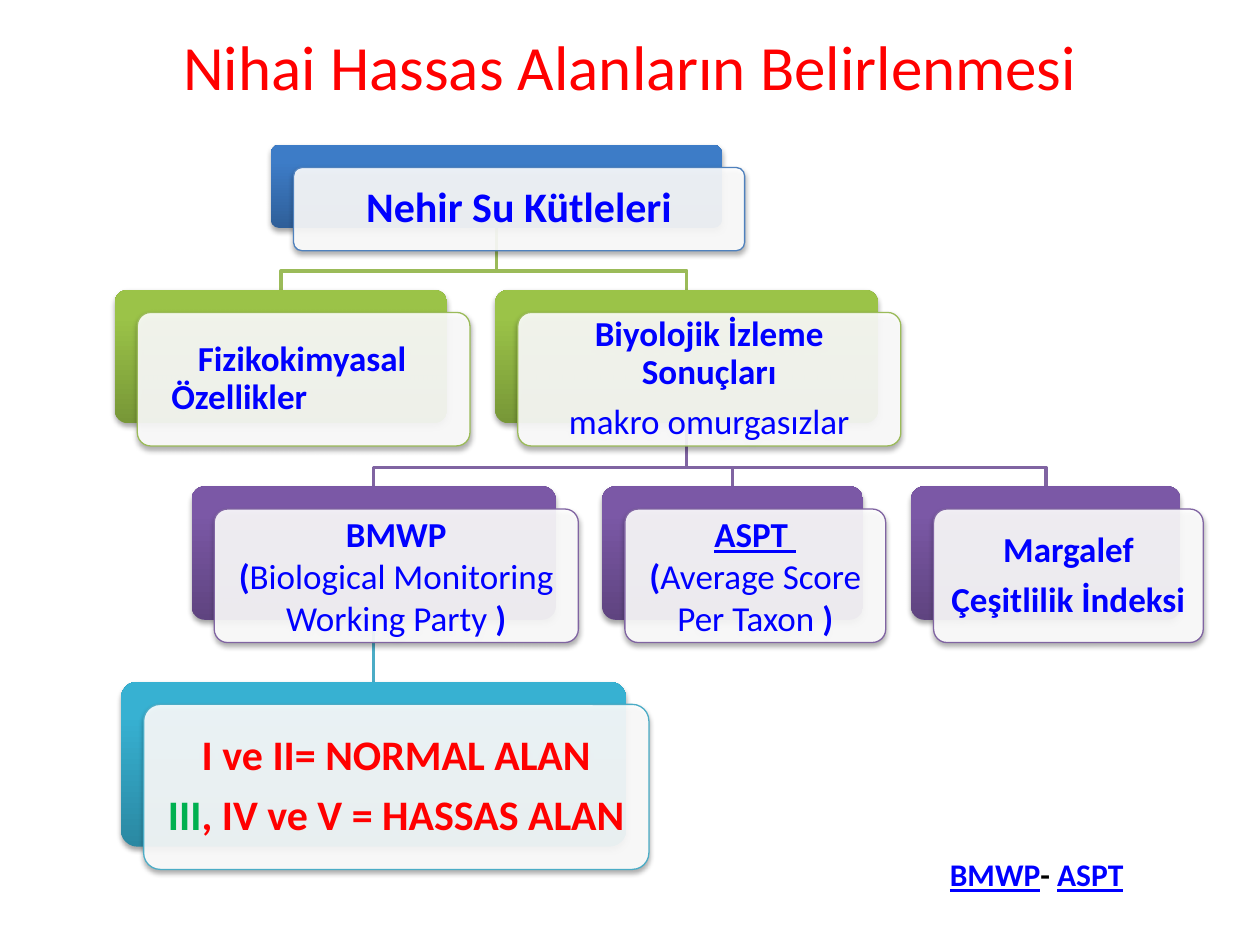
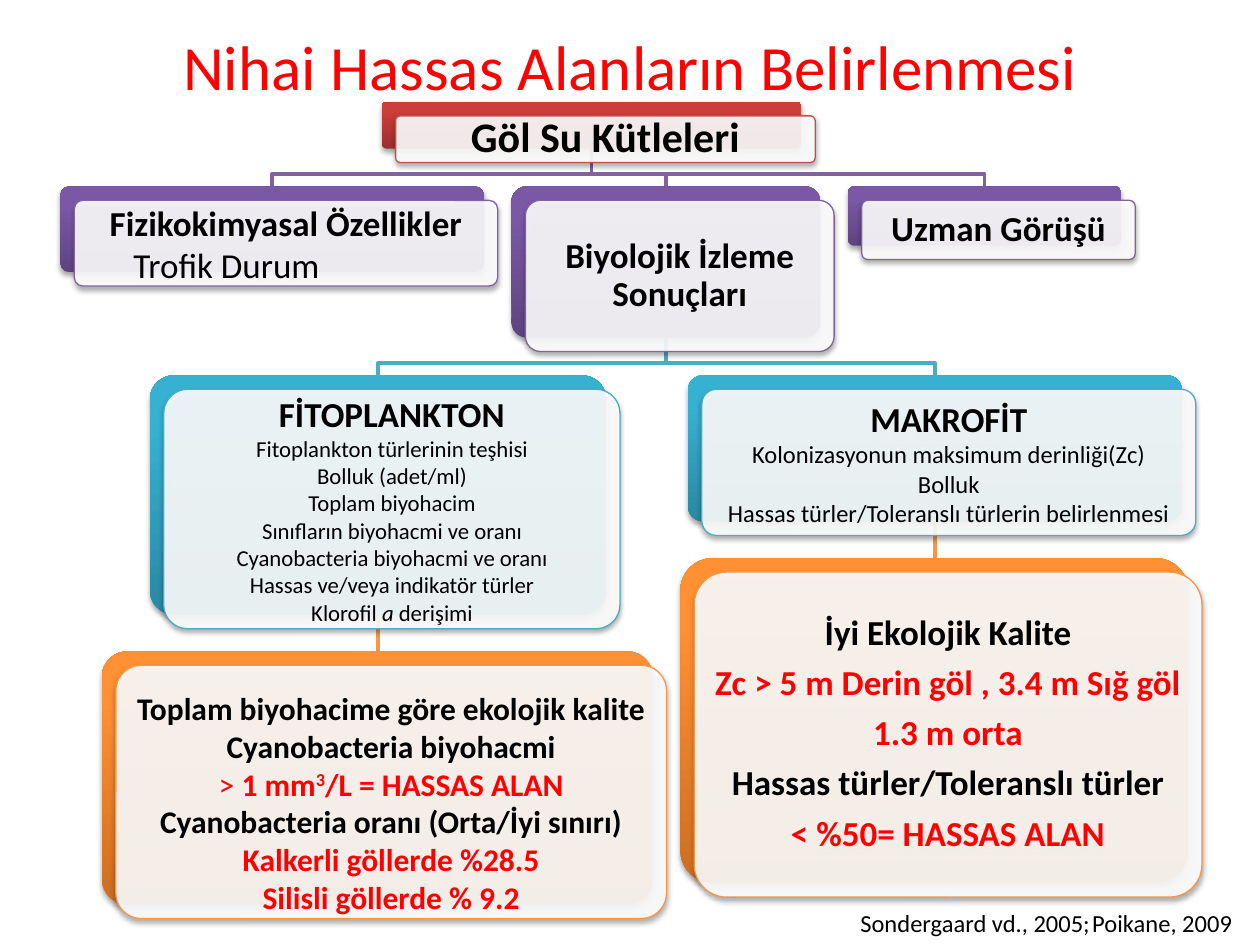
from lxml import etree
from pptx import Presentation, util as u
from pptx.dml.color import RGBColor
from pptx.enum import shapes, text
from pptx.oxml.ns import qn

RED, GREEN, BLUE, BLACK, WHITE = "FF0000", "00B050", "0000FF", "000000", "FFFFFF"
TITLE = "Nihai Hassas Alanların Belirlenmesi"
PALETTE = {
    "blue": ("2F5F99", "3D7CC7", "4F81BD"),
    "red": ("9C2F2D", "CB3E3A", "C0504D"),
    "green": ("779737", "9BC348", "9BBB59"),
    "purple": ("5F4480", "7B58A6", "8064A2"),
    "aqua": ("2A88A2", "37B1D2", "4BACC6"),
    "orange": ("CC6E20", "FF9034", "F79646"),
}


def rgb(value):
    """Turn a hex string into a colour."""
    return RGBColor.from_string(value)


def inches(*lengths):
    """Turn numbers into lengths in inches."""
    return [u.Inches(length) for length in lengths]


class Deck:
    """Hold the shared style and the current slide."""

    def __init__(self):
        """Start an empty 10 by 7.5 inch presentation."""
        self.presentation = Presentation()
        self.presentation.slide_width, self.presentation.slide_height = inches(10, 7.5)

    def new_slide(self, ink, offset, elbow):
        """Add a titled slide with its ink, card offset and elbow height."""
        self.slide = self.presentation.slides.add_slide(self.presentation.slide_layouts[5])
        self.ink, self.offset, self.elbow = ink, offset, elbow
        title = self.slide.shapes.title
        title.left, title.top, title.width, title.height = inches(0.5, -0.11, 9, 1.25)
        title.text_frame.vertical_anchor = text.MSO_ANCHOR.MIDDLE
        self.add_text(title, TITLE, size=36, bold=False, color=RED, tight=False)

    def add_text(self, shape, content, new=True, size=20, bold=True, color=None, tight=True,
                 align="CENTER", margin=0, indent=0, underline=False, italic=False, raised=False):
        """Add formatted text as a new paragraph or at the end of the last one."""
        frame = shape.text_frame
        paragraph = frame.paragraphs[-1]
        if new:
            if paragraph.runs:
                paragraph = frame.add_paragraph()
            paragraph.alignment = text.PP_ALIGN[align]
            if margin:
                properties = paragraph._p.get_or_add_pPr()
                properties.set("marL", str(u.Inches(margin)))
                properties.set("indent", str(u.Inches(indent)))
            if tight:
                paragraph.line_spacing = 0.9
                paragraph.space_after = u.Pt(size * 0.35)
        run = paragraph.add_run()
        run.text = content
        font = run.font
        font.name, font.size, font.bold = "Calibri", u.Pt(size), bold
        font.italic, font.underline = italic, underline
        font.color.rgb = rgb(color or self.ink)
        if raised:
            font._element.set("baseline", "30000")

    def link(self, parent, child, palette):
        """Join the bottom of a parent box to the top of a child box."""
        start = parent[0] + parent[2] / 2, parent[1] + parent[3]
        end = child[0] + child[2] / 2, child[1]
        if abs(start[0] - end[0]) < 0.02:
            line = self.slide.shapes.add_connector(
                shapes.MSO_CONNECTOR.STRAIGHT, *inches(*start, start[0], end[1]))
            etree.SubElement(line._element.spPr, qn("a:effectLst"))
        else:
            bend = end[1] - self.elbow
            builder = self.slide.shapes.build_freeform(*inches(*start))
            corners = [(start[0], bend), (end[0], bend), end]
            builder.add_line_segments([inches(*corner) for corner in corners], close=False)
            line = builder.convert_to_shape()
            line.fill.background()
            line.shadow.inherit = False
        line.line.color.rgb = rgb(PALETTE[palette][2])
        line.line.width = u.Pt(2)

    def plate(self, left, top, width, height):
        """Add a rounded plate with a soft shadow below it."""
        shape = self.slide.shapes.add_shape(
            shapes.MSO_SHAPE.ROUNDED_RECTANGLE, *inches(left, top, width, height))
        shape.adjustments[0] = 0.1
        shape.shadow.inherit = False
        effects = shape._element.spPr.find(qn("a:effectLst"))
        shadow = etree.SubElement(effects, qn("a:outerShdw"), blurRad=str(u.Pt(3.1)),
                                  dist=str(u.Pt(1.8)), dir="5400000", rotWithShape="0")
        shade = etree.SubElement(shadow, qn("a:srgbClr"), val=BLACK)
        etree.SubElement(shade, qn("a:alpha"), val="35000")
        return shape

    def card(self, box, palette, inset=0.08, top=None):
        """Add a coloured plate with a pale text card shifted over it."""
        dark, light, edge = PALETTE[palette]
        left, upper, width, height = box
        back = self.plate(*box)
        back.line.fill.background()
        back.fill.gradient()
        back.fill.gradient_angle = 90
        for stop, color, position in zip(back.fill.gradient_stops, (dark, light), (0, 0.8)):
            stop.color.rgb = rgb(color)
            stop.position = position
        front = self.plate(left + self.offset, upper + self.offset, width, height)
        front.fill.solid()
        front.fill.fore_color.rgb = rgb(WHITE)
        white = front._element.spPr.find(qn("a:solidFill")).find(qn("a:srgbClr"))
        etree.SubElement(white, qn("a:alpha"), val="90000")
        front.line.color.rgb = rgb(edge)
        front.line.width = u.Pt(0.75)
        frame = front.text_frame
        frame.word_wrap = True
        frame.vertical_anchor = text.MSO_ANCHOR.TOP if top else text.MSO_ANCHOR.MIDDLE
        frame.margin_left = frame.margin_right = frame.margin_bottom = u.Inches(inset)
        frame.margin_top = u.Inches(top or inset)
        return front

    def note(self, left, top, width, height, wrap=False):
        """Add an empty text box."""
        shape = self.slide.shapes.add_textbox(*inches(left, top, width, height))
        shape.text_frame.word_wrap = wrap
        return shape


def rivers(deck):
    """Build the slide on river water bodies."""
    deck.new_slide(BLUE, offset=0.18, elbow=0.15)
    river = (2.15, 1.15, 3.58, 0.66)
    chemistry = (0.91, 2.3, 2.64, 1.06)
    biology = (3.93, 2.3, 3.04, 1.06)
    bmwp = (1.52, 3.86, 2.89, 1.06)
    aspt = (4.78, 3.86, 2.07, 1.06)
    margalef = (7.23, 3.86, 2.14, 1.06)
    result = (0.96, 5.41, 4.01, 1.31)

    for index in (margalef, aspt, bmwp):
        deck.link(biology, index, "purple")
    deck.link(bmwp, result, "aqua")
    for branch in (biology, chemistry):
        deck.link(river, branch, "green")

    deck.add_text(deck.card(river, "blue", inset=0.1), "Nehir Su Kütleleri", size=24)
    deck.add_text(deck.card(chemistry, "green"), "Fizikokimyasal Özellikler",
                  align="LEFT", margin=0.16, indent=0.21)
    card = deck.card(biology, "green")
    deck.add_text(card, "Biyolojik İzleme Sonuçları")
    deck.add_text(card, "makro omurgasızlar", bold=False)

    indices = [(bmwp, "BMWP", "Biological Monitoring Working Party ", ")", False),
               (aspt, "ASPT ", "Average Score Per Taxon", " )", True)]
    for box, name, meaning, closing, underline in indices:
        card = deck.card(box, "purple")
        deck.add_text(card, name, underline=underline, tight=False)
        deck.add_text(card, "(", tight=False)
        deck.add_text(card, meaning, new=False, bold=False)
        deck.add_text(card, closing, new=False)

    card = deck.card(margalef, "purple")
    deck.add_text(card, "Margalef")
    deck.add_text(card, "Çeşitlilik İndeksi")

    card = deck.card(result, "aqua", inset=0.1)
    deck.add_text(card, "I ve II= NORMAL ALAN", size=24, color=RED)
    deck.add_text(card, "III", size=24, color=GREEN)
    deck.add_text(card, ", IV ve V = HASSAS ALAN", new=False, size=24, color=RED)

    note = deck.note(7.44, 6.74, 2.05, 0.4, wrap=True)
    deck.add_text(note, "BMWP", size=18, underline=True, align="LEFT", tight=False)
    deck.add_text(note, "- ", new=False, size=18, color=BLACK)
    deck.add_text(note, "ASPT", new=False, size=18, underline=True)


def lakes(deck):
    """Build the slide on lake water bodies."""
    deck.new_slide(BLACK, offset=0.11, elbow=0.1)
    lake = (3.03, 0.81, 3.33, 0.37)
    chemistry = (0.48, 1.48, 3.36, 0.68)
    biology = (4.06, 1.48, 2.45, 1.2)
    expert = (6.73, 1.48, 2.17, 0.47)
    plankton = (1.19, 2.98, 3.62, 1.9)
    macrophyte = (5.46, 2.98, 3.92, 1.16)
    plankton_result = (0.81, 5.17, 4.37, 2.01)
    macrophyte_result = (5.4, 4.43, 4.03, 2.58)

    for branch in (expert, biology, chemistry):
        deck.link(lake, branch, "purple")
    for group, result in ((macrophyte, macrophyte_result), (plankton, plankton_result)):
        deck.link(biology, group, "aqua")
        deck.link(group, result, "orange")

    deck.add_text(deck.card(lake, "red", inset=0.1), "Göl Su Kütleleri", size=24)
    card = deck.card(chemistry, "purple")
    deck.add_text(card, "Fizikokimyasal Özellikler", tight=False)
    deck.add_text(card, "Trofik Durum", bold=False, tight=False, align="LEFT", margin=0.37)
    deck.add_text(deck.card(biology, "purple"), "Biyolojik İzleme Sonuçları")

    card = deck.card(plankton, "aqua")
    deck.add_text(card, "FİTOPLANKTON", tight=False)
    for measure in ("Fitoplankton türlerinin teşhisi", "Bolluk (adet/ml)", "Toplam biyohacim",
                    "Sınıfların biyohacmi ve oranı", "Cyanobacteria biyohacmi ve oranı",
                    "Hassas ve/veya indikatör türler", "Klorofil "):
        deck.add_text(card, measure, size=13, bold=False, tight=False)
    deck.add_text(card, "a", new=False, size=13, bold=False, italic=True)
    deck.add_text(card, " derişimi", new=False, size=13, bold=False)

    card = deck.card(plankton_result, "orange", top=0.13)
    deck.add_text(card, "Toplam biyohacime göre ekolojik kalite", size=18, tight=False)
    deck.add_text(card, "Cyanobacteria biyohacmi", size=18, tight=False)
    deck.add_text(card, "> ", size=18, bold=False, color=RED, tight=False)
    deck.add_text(card, "1 mm", new=False, size=18, color=RED)
    deck.add_text(card, "3", new=False, size=18, color=RED, raised=True)
    deck.add_text(card, "/L = HASSAS ALAN", new=False, size=18, color=RED)
    deck.add_text(card, "Cyanobacteria oranı (Orta/İyi sınırı)", size=18, tight=False)
    for limit in ("Kalkerli göllerde %28.5", "Silisli göllerde % 9.2"):
        deck.add_text(card, limit, size=18, color=RED, tight=False)

    card = deck.card(macrophyte, "aqua")
    deck.add_text(card, "MAKROFİT", tight=False)
    for measure in ("Kolonizasyonun maksimum derinliği(Zc)", "Bolluk",
                    "Hassas türler/Toleranslı türlerin belirlenmesi"):
        deck.add_text(card, measure, size=14, bold=False, tight=False)

    card = deck.card(macrophyte_result, "orange")
    for content, color in (("İyi Ekolojik Kalite", BLACK),
                           ("Zc > 5 m Derin göl , 3.4 m Sığ göl", RED),
                           ("1.3 m orta", RED),
                           ("Hassas türler/Toleranslı türler", BLACK),
                           ("< %50= HASSAS ALAN", RED)):
        deck.add_text(card, content, color=color)
    deck.add_text(deck.card(expert, "purple"), "Uzman Görüşü")

    for left, width, citation in ((8.57, 1.32, "Poikane, 2009"),
                                  (6.73, 2.04, "Sondergaard vd., 2005;")):
        deck.add_text(deck.note(left, 7.16, width, 0.34), citation, size=14, bold=False,
                      align="LEFT", tight=False)


def main():
    """Build both slides and save them."""
    deck = Deck()
    rivers(deck)
    lakes(deck)
    deck.presentation.save("out.pptx")


if __name__ == "__main__":
    main()
